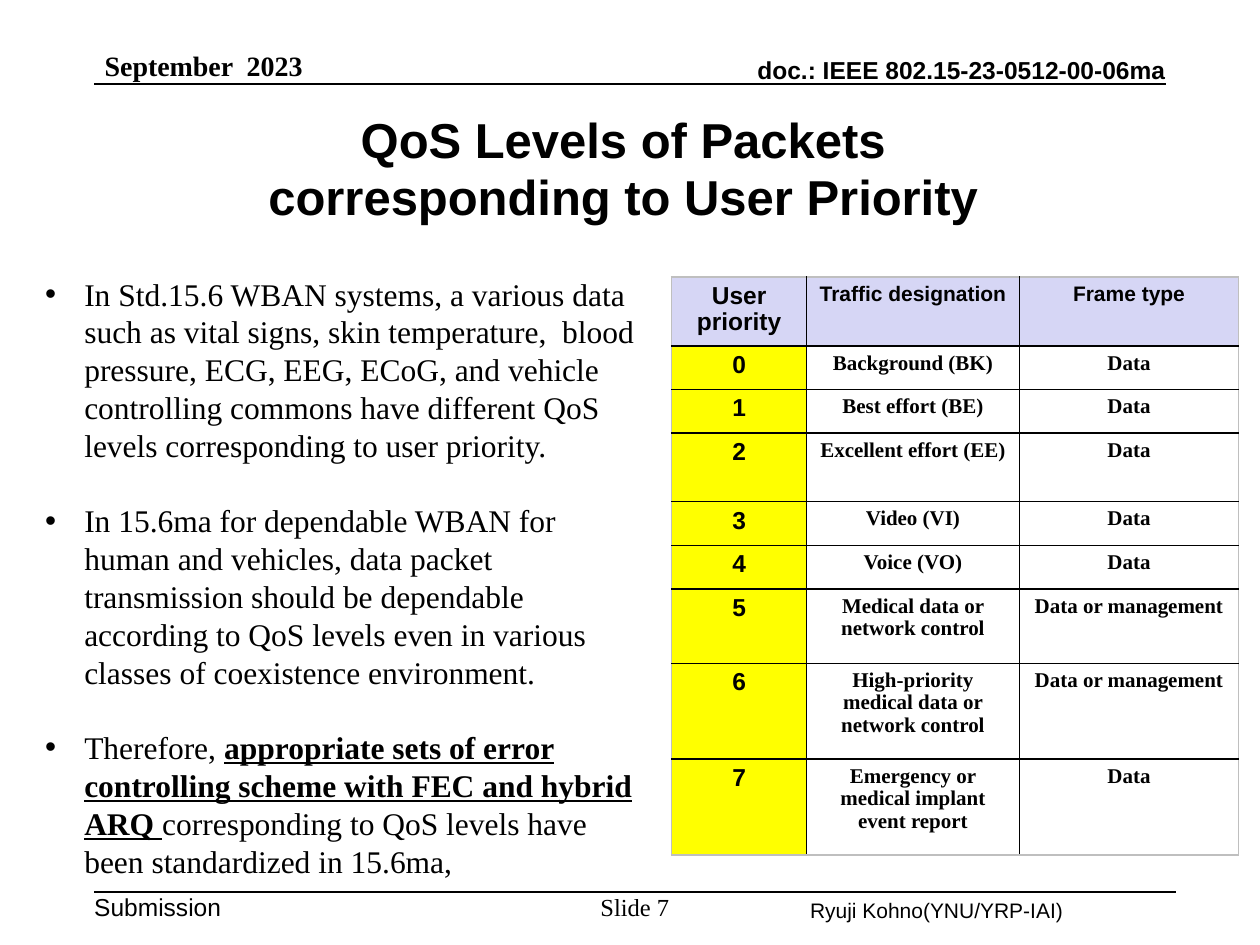
from dataclasses import dataclass

from lxml.etree import SubElement
from pptx import Presentation
from pptx.dml.color import RGBColor
from pptx.enum.shapes import MSO_CONNECTOR
from pptx.enum.text import MSO_ANCHOR, PP_ALIGN
from pptx.oxml.ns import qn
from pptx.util import Cm, Pt


@dataclass(frozen=True)
class Theme:
    ink: str = "000000"
    edge: str = "BFBFBF"
    head: str = "D6D6F5"
    mark: str = "FFFF00"
    sans: str = "Arial"
    serif: str = "Times New Roman"
    title: int = 28
    body: int = 18
    date: int = 16
    label: int = 14
    small: int = 12
    lead: float = 21.6


class Deck:
    def __init__(self, theme):
        self.theme = theme
        self.prs = Presentation()
        self.prs.slide_width, self.prs.slide_height = Cm(25.4), Cm(19.05)
        self.slide = self.prs.slides.add_slide(self.prs.slide_layouts[6])

    def style(self, para, size, face, bold=False):
        for run in para.runs:
            font = run.font
            font.size, font.name, font.bold = Pt(size), face, bold
            font.color.rgb = RGBColor.from_string(self.theme.ink)

    def frame(self, box, inset=True):
        shape = self.slide.shapes.add_textbox(*map(Cm, box))
        frame = shape.text_frame
        frame.word_wrap = True
        if not inset:
            frame.margin_left = frame.margin_right = 0
            frame.margin_top = frame.margin_bottom = 0
        return frame

    def text(self, box, words, size, face, bold=False, align=PP_ALIGN.LEFT,
             anchor=MSO_ANCHOR.TOP, inset=False, lead=None):
        frame = self.frame(box, inset)
        frame.text = words
        frame.vertical_anchor = anchor
        for para in frame.paragraphs:
            para.alignment = align
            if lead:
                para.line_spacing = Pt(lead)
            self.style(para, size, face, bold)

    def rule(self, left, right, top):
        line = self.slide.shapes.add_connector(
            MSO_CONNECTOR.STRAIGHT, Cm(left), Cm(top), Cm(right), Cm(top))
        line.line.color.rgb = RGBColor.from_string(self.theme.ink)
        line.line.width = Pt(1)
        SubElement(line._element.spPr, qn("a:effectLst"))

    def bullets(self, box, items):
        """Each item is a list of texts; every second one is stressed."""
        frame = self.frame(box)
        for i, parts in enumerate(items):
            para = frame.add_paragraph() if i else frame.paragraphs[0]
            props = para._p.get_or_add_pPr()
            props.set("marL", str(Cm(0.79)))
            props.set("indent", str(-Cm(0.79)))
            SubElement(props, qn("a:buFont"), typeface=self.theme.sans)
            SubElement(props, qn("a:buChar"), char="•")
            para.line_spacing = Pt(self.theme.lead)
            if i:
                para.space_before = Pt(self.theme.lead)
            for part in parts:
                para.add_run().text = part
            self.style(para, self.theme.body, self.theme.serif)
            for run in para.runs[1::2]:
                run.font.bold = run.font.underline = True

    def border(self, cell, sides):
        """Draw cell sides, given as (tag, colour) in schema order."""
        props = cell._tc.get_or_add_tcPr()
        for i, (tag, hue) in enumerate(sides):
            line = props.makeelement(qn("a:" + tag), {"w": str(Pt(1))})
            fill = SubElement(line, qn("a:solidFill"))
            SubElement(fill, qn("a:srgbClr"), val=hue)
            props.insert(i, line)

    def table(self, left, top, widths, heights, rows):
        t = self.theme
        grid = self.slide.shapes.add_table(
            len(rows), len(widths), Cm(left), Cm(top),
            Cm(sum(widths)), Cm(sum(heights))).table
        grid.first_row = grid.horz_banding = False
        for col, width in zip(grid.columns, widths):
            col.width = Cm(width)
        for row, height in zip(grid.rows, heights):
            row.height = Cm(height)
        for r, row in enumerate(rows):
            for c, words in enumerate(row):
                cell = grid.cell(r, c)
                cell.text = words
                para = cell.text_frame.paragraphs[0]
                para.alignment = PP_ALIGN.CENTER
                para.line_spacing = 0.96
                self.style(para, t.small if c else t.label,
                           t.serif if r and c else t.sans, True)
                hue = t.head if r == 0 else t.mark if c == 0 else None
                if hue:
                    cell.fill.solid()
                    cell.fill.fore_color.rgb = RGBColor.from_string(hue)
                else:
                    cell.fill.background()
                outer = {"lnL": c == 0, "lnR": c == len(widths) - 1,
                         "lnT": r == 0, "lnB": r == len(rows) - 1}
                self.border(cell, [(tag, t.edge if out else t.ink)
                                   for tag, out in outer.items()])


def main():
    t = Theme()
    deck = Deck(t)

    deck.text((12.5, 1.09, 11, 0.61), "doc.: IEEE 802.15-23-0512-00-06ma",
              t.label, t.sans, True, PP_ALIGN.RIGHT, MSO_ANCHOR.BOTTOM)
    deck.rule(1.9, 23.5, 1.7)
    deck.text((1.9, 17.98, 2.95, 0.61), "Submission", t.label, t.sans)
    deck.rule(1.9, 23.7, 17.98)
    deck.text((16.08, 17.96, 7.09, 0.76), "Ryuji Kohno(YNU/YRP-IAI)",
              t.small, t.sans, inset=True)
    deck.text((11.8, 17.98, 2, 0.61), "Slide 7", t.label, t.serif,
              align=PP_ALIGN.CENTER)
    deck.text((1.9, 1.9, 21.6, 2.97),
              "QoS Levels of Packets \vcorresponding to User Priority ",
              t.title, t.sans, True, PP_ALIGN.CENTER, MSO_ANCHOR.MIDDLE,
              inset=True, lead=33)
    deck.text((2.11, 0.97, 4.45, 0.69), "September  2023", t.date, t.serif,
              True, anchor=MSO_ANCHOR.BOTTOM)

    traffic = [
        ("Background (BK)", "Data"),
        ("Best effort (BE)", "Data"),
        ("Excellent effort (EE)", "Data"),
        ("Video (VI)", "Data"),
        ("Voice (VO)", "Data"),
        ("Medical data or network control", "Data or management"),
        ("High-priority medical data or network control",
         "Data or management"),
        ("Emergency or medical implant event report", "Data"),
    ]
    rows = [("User priority", "Traffic designation", "Frame type")]
    rows += [(str(i), *pair) for i, pair in enumerate(traffic)]
    deck.table(13.54, 5.58, (2.72, 4.29, 4.42),
               (1.38, 0.88, 0.88, 1.38, 0.88, 0.88, 1.5, 1.93, 1.93), rows)

    deck.bullets((0.66, 5.41, 12.42, 12.57), [
        ["In Std.15.6 WBAN systems, a various data such as vital signs, "
         "skin temperature,  blood pressure, ECG, EEG, ECoG, and vehicle "
         "controlling commons have different QoS levels corresponding to "
         "user priority."],
        ["In 15.6ma for dependable WBAN for human and vehicles, data packet "
         "transmission should be dependable according to QoS levels even in "
         "various classes of coexistence environment."],
        ["Therefore, ",
         "appropriate sets of error controlling scheme with FEC and hybrid "
         "ARQ ",
         "corresponding to QoS levels have been standardized in 15.6ma,"],
    ])
    deck.prs.save("out.pptx")


if __name__ == "__main__":
    main()
